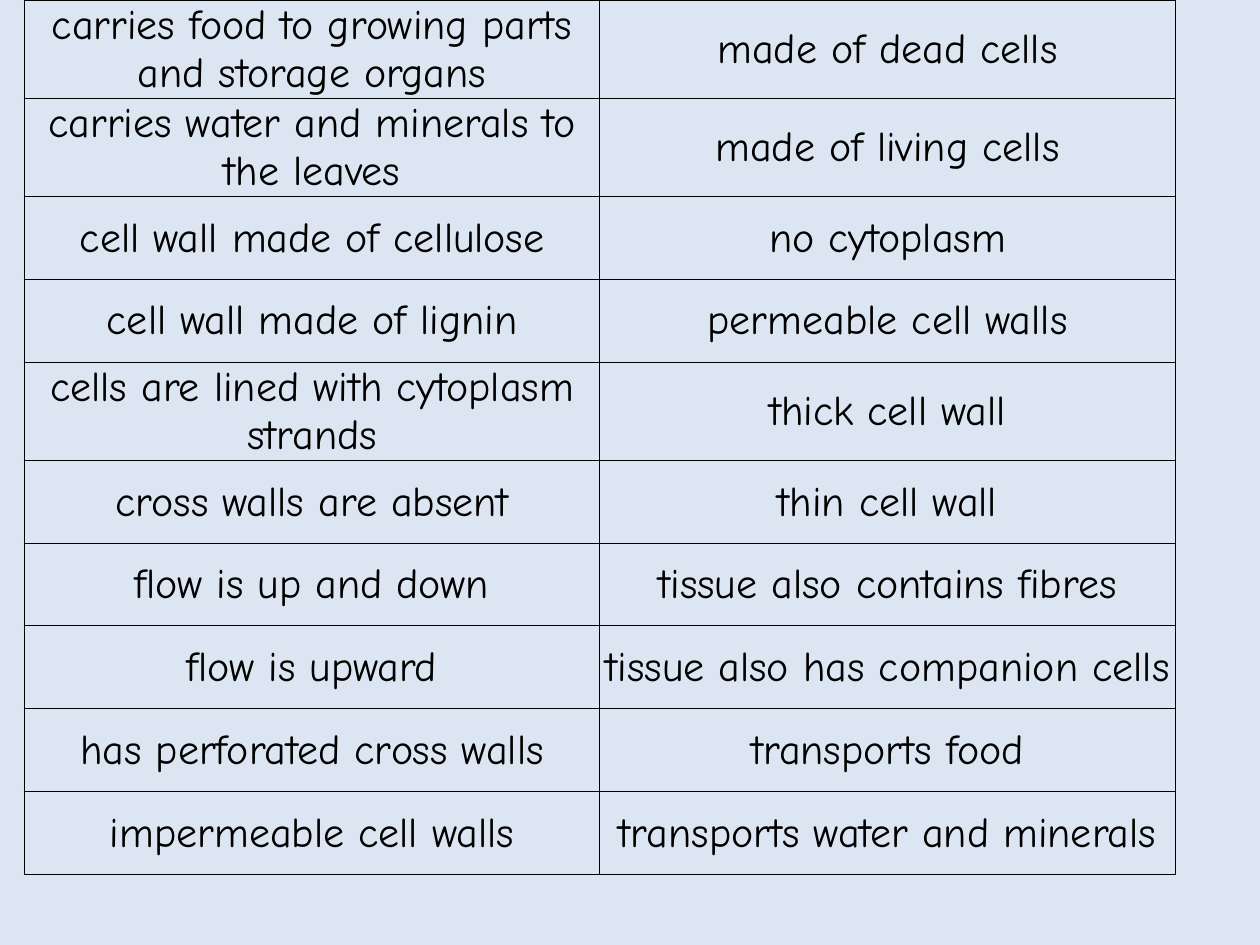
from lxml.etree import SubElement
from pptx import Presentation
from pptx.dml.color import RGBColor
from pptx.enum.text import MSO_ANCHOR, PP_ALIGN
from pptx.oxml.ns import qn
from pptx.util import Cm, Pt

BACKGROUND = RGBColor(0xDC, 0xE6, 0xF2)
BLACK = RGBColor(0x00, 0x00, 0x00)
FONT_NAME = "Comic Neue"
COLUMN_WIDTH = Cm(11.6)
ROW_HEIGHT = Cm(1.67)
CELL_MARGIN = Cm(0.03)

STATEMENTS = [
    ("carries food to growing parts and storage organs", "made of dead cells"),
    ("carries water and minerals to the leaves", "made of living cells"),
    ("cell wall made of cellulose", "no cytoplasm"),
    ("cell wall made of lignin", "permeable cell walls"),
    ("cells are lined with cytoplasm strands", "thick cell wall"),
    ("cross walls are absent", "thin cell wall"),
    ("flow is up and down", "tissue also contains fibres"),
    ("flow is upward", "tissue also has companion cells"),
    ("has perforated cross walls", "transports food"),
    ("impermeable cell walls", "transports water and minerals"),
]


def add_borders(cell):
    """Draw a thin black line on all four sides of a cell."""
    properties = cell._tc.get_or_add_tcPr()
    # Borders must stand before the fill in the cell properties
    for index, side in enumerate(("lnL", "lnR", "lnT", "lnB")):
        line = SubElement(properties, qn(f"a:{side}"), w=str(Pt(0.5)))
        fill = SubElement(line, qn("a:solidFill"))
        SubElement(fill, qn("a:srgbClr"), val=str(BLACK))
        properties.insert(index, line)


def format_cell(cell, text):
    cell.fill.background()
    cell.vertical_anchor = MSO_ANCHOR.MIDDLE
    cell.margin_left = cell.margin_right = cell.margin_top = CELL_MARGIN
    cell.margin_bottom = 0
    cell.text_frame.text = text
    paragraph = cell.text_frame.paragraphs[0]
    paragraph.alignment = PP_ALIGN.CENTER
    font = paragraph.runs[0].font
    font.name = FONT_NAME
    font.size = Pt(24)
    font.color.rgb = BLACK
    add_borders(cell)


def add_statement_table(slide):
    rows, columns = len(STATEMENTS), len(STATEMENTS[0])
    table = slide.shapes.add_table(
        rows, columns, Cm(0.49), 0, COLUMN_WIDTH * columns, ROW_HEIGHT * rows
    ).table
    table.first_row = False
    table.horz_banding = False
    for row, texts in zip(table.rows, STATEMENTS):
        row.height = ROW_HEIGHT
        for cell, text in zip(row.cells, texts):
            format_cell(cell, text)


def main():
    presentation = Presentation()
    presentation.slide_width = Cm(25.4)
    presentation.slide_height = Cm(19.05)

    # Blank slide with a pale blue background
    slide = presentation.slides.add_slide(presentation.slide_layouts[6])
    slide.background.fill.solid()
    slide.background.fill.fore_color.rgb = BACKGROUND

    # Statements about plant transport tissues
    add_statement_table(slide)
    presentation.save("out.pptx")


if __name__ == "__main__":
    main()
